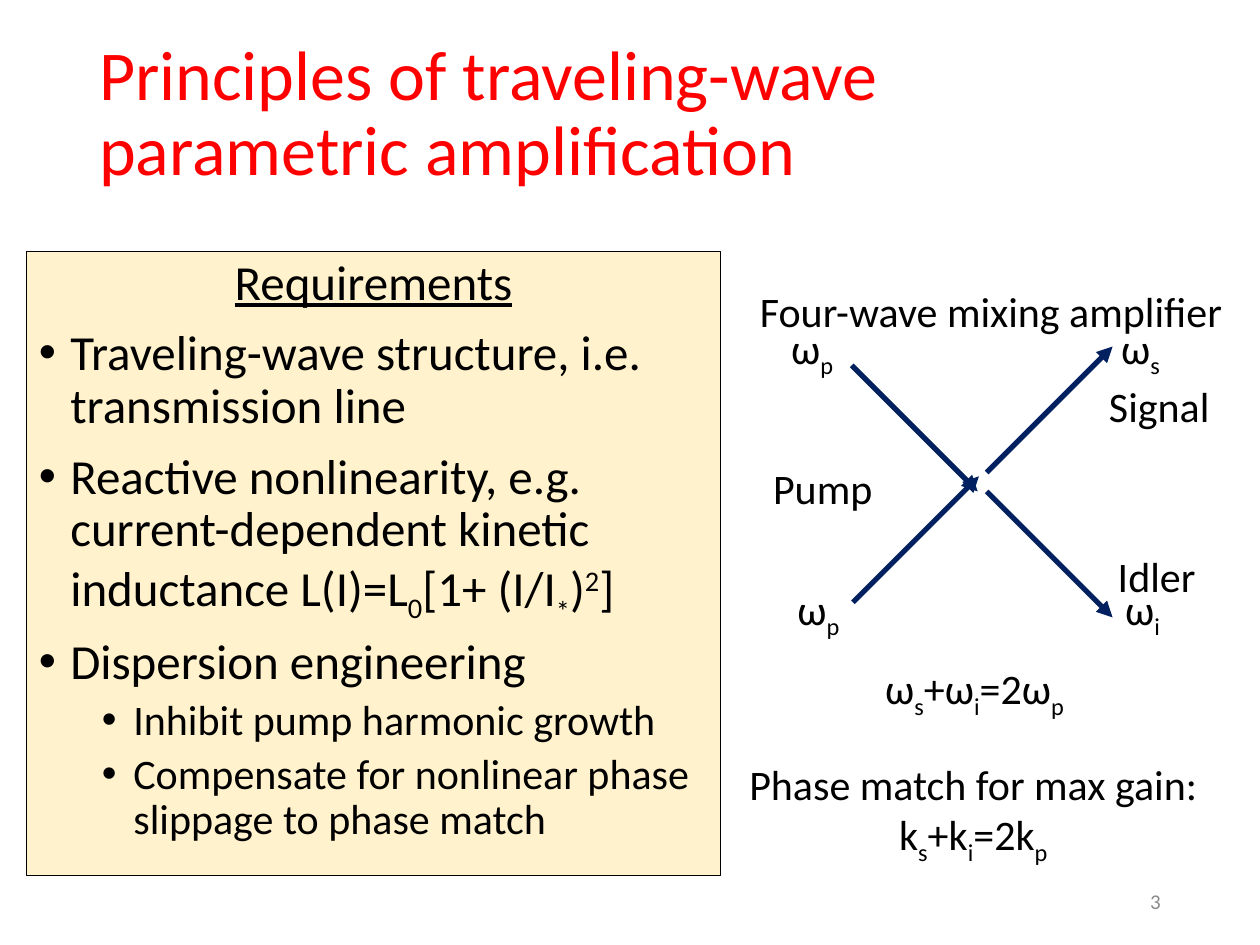
from lxml import etree
from pptx import Presentation
from pptx.dml.color import RGBColor
from pptx.enum.shapes import MSO_CONNECTOR, MSO_SHAPE
from pptx.enum.text import MSO_ANCHOR, MSO_AUTO_SIZE, PP_ALIGN
from pptx.oxml.ns import qn
from pptx.util import Pt

LEFT, CENTER, RIGHT = PP_ALIGN.LEFT, PP_ALIGN.CENTER, PP_ALIGN.RIGHT
TOP, MIDDLE = MSO_ANCHOR.TOP, MSO_ANCHOR.MIDDLE
THEME = {
    "font": "Calibri",
    "title": RGBColor(0xFF, 0x00, 0x00),
    "text": RGBColor(0x00, 0x00, 0x00),
    "panel": RGBColor(0xFF, 0xF2, 0xCC),
    "arrow": RGBColor(0x00, 0x20, 0x60),
    "muted": RGBColor(0x8C, 0x8C, 0x8C),
    "title_size": 40, "head_size": 28, "body_size": 24, "number_size": 12,
}
SUB = -25


def add_runs(p, runs, size, color=THEME["text"]):
    """Add runs, each a string or a (string, baseline percent) pair."""
    for item in runs:
        text, base = (item, 0) if isinstance(item, str) else item
        r = p.add_run()
        r.text = text
        r.font.name = THEME["font"]
        r.font.size = Pt(size)
        r.font.color.rgb = color
        if base:
            r._r.get_or_add_rPr().set("baseline", str(base * 1000))


def add_label(box, runs, align=CENTER, wrap=True, anchor=TOP,
              size=THEME["body_size"], color=THEME["text"]):
    tf = s.shapes.add_textbox(*map(Pt, box)).text_frame
    tf.word_wrap = wrap
    tf.vertical_anchor = anchor
    p = tf.paragraphs[0]
    p.alignment = align
    add_runs(p, runs, size, color)


prs = Presentation()
prs.slide_width, prs.slide_height = Pt(720), Pt(540)
s = prs.slides.add_slide(prs.slide_layouts[5])

# Title
title = s.shapes.title
title.left, title.top, title.width, title.height = map(Pt, (49.5, 13.7, 621, 104.4))
tf = title.text_frame
tf.auto_size = MSO_AUTO_SIZE.NONE
tf.vertical_anchor = MIDDLE
p = tf.paragraphs[0]
p.alignment = LEFT
p.line_spacing = 0.9
add_runs(p, ["Principles of traveling-wave parametric amplification"],
         THEME["title_size"], THEME["title"])

# Requirements panel
panel = s.shapes.add_shape(MSO_SHAPE.RECTANGLE, Pt(15.1), Pt(143.8), Pt(396.7), Pt(356.4))
panel.shadow.inherit = False
panel.fill.solid()
panel.fill.fore_color.rgb = THEME["panel"]
panel.line.color.rgb = THEME["text"]
panel.line.width = Pt(0.75)
tf = panel.text_frame
tf.word_wrap = True
tf.vertical_anchor = TOP
p = tf.paragraphs[0]
p.alignment = CENTER
p.line_spacing = 0.9
p.space_before = Pt(10)
add_runs(p, ["Requirements"], THEME["head_size"])
p.runs[0].font.underline = True

requirements = [
    (0, ["Traveling-wave structure, i.e. transmission line"]),
    (0, ["Reactive nonlinearity, e.g. current-dependent kinetic inductance L(I)=L",
         ("0", SUB), "[1+ (I/I", ("*", -30), ")", ("2", 30), "]"]),
    (0, ["Dispersion engineering"]),
    (1, ["Inhibit pump harmonic growth"]),
    (1, ["Compensate for nonlinear phase slippage to phase match"]),
]
for level, runs in requirements:
    p = tf.add_paragraph()
    p.level = level
    p.alignment = LEFT
    p.line_spacing = 0.9
    p.space_before = Pt(5 if level else 10)
    pPr = p._p.get_or_add_pPr()
    pPr.set("marL", str(Pt(18 + 36 * level)))
    pPr.set("indent", str(Pt(-18)))
    etree.SubElement(pPr, qn("a:buFont"), typeface="Arial")
    etree.SubElement(pPr, qn("a:buChar"), char="•")
    add_runs(p, runs, THEME["body_size"] if level else THEME["head_size"])

# Mixing diagram: two pumps in, signal and idler out
add_label((417.6, 159.8, 297.4, 36), ["Four-wave mixing amplifier"])
ARROW = 72
for x, y, rise in [(486.7, 208.8, ARROW), (563.8, 280.8, ARROW),
                   (563.8, 270, -ARROW), (487.4, 344.2, -ARROW)]:
    arrow = s.shapes.add_connector(MSO_CONNECTOR.STRAIGHT,
                                   Pt(x), Pt(y), Pt(x + ARROW), Pt(y + rise))
    arrow.line.color.rgb = THEME["arrow"]
    arrow.line.width = Pt(3)
    etree.SubElement(arrow.line._get_or_add_ln(), qn("a:tailEnd"), type="triangle")
    etree.SubElement(arrow._element.spPr, qn("a:effectLst"))

# Frequencies at the arrow ends
for x, y, width, index in [(445, 180.7, 41, "p"), (448.6, 329.8, 41, "p"),
                           (633.6, 180.7, 38, "s"), (635.8, 329.8, 38, "i")]:
    add_label((x, y, width, 36), ["ω", (index, SUB)], LEFT, wrap=False)

# Wave names
for x, y, name in [(418.3, 260.6, "Pump"), (610.6, 213.8, "Signal"), (609.1, 311, "Idler")]:
    add_label((x, y, 103.7, 36), [name])

# Energy conservation and phase matching
add_label((496.8, 375.1, 120.2, 36),
          ["ω", ("s", SUB), "+ω", ("i", SUB), "=2ω", ("p", SUB)], wrap=False)
add_label((416.9, 429.8, 278.6, 87.1),
          ["Phase match for max gain: k", ("s", SUB), "+k", ("i", SUB), "=2k", ("p", SUB)])

# Slide number
add_label((508.3, 500.4, 162, 28.8), ["3"], RIGHT, anchor=MIDDLE,
          size=THEME["number_size"], color=THEME["muted"])

prs.save("out.pptx")
